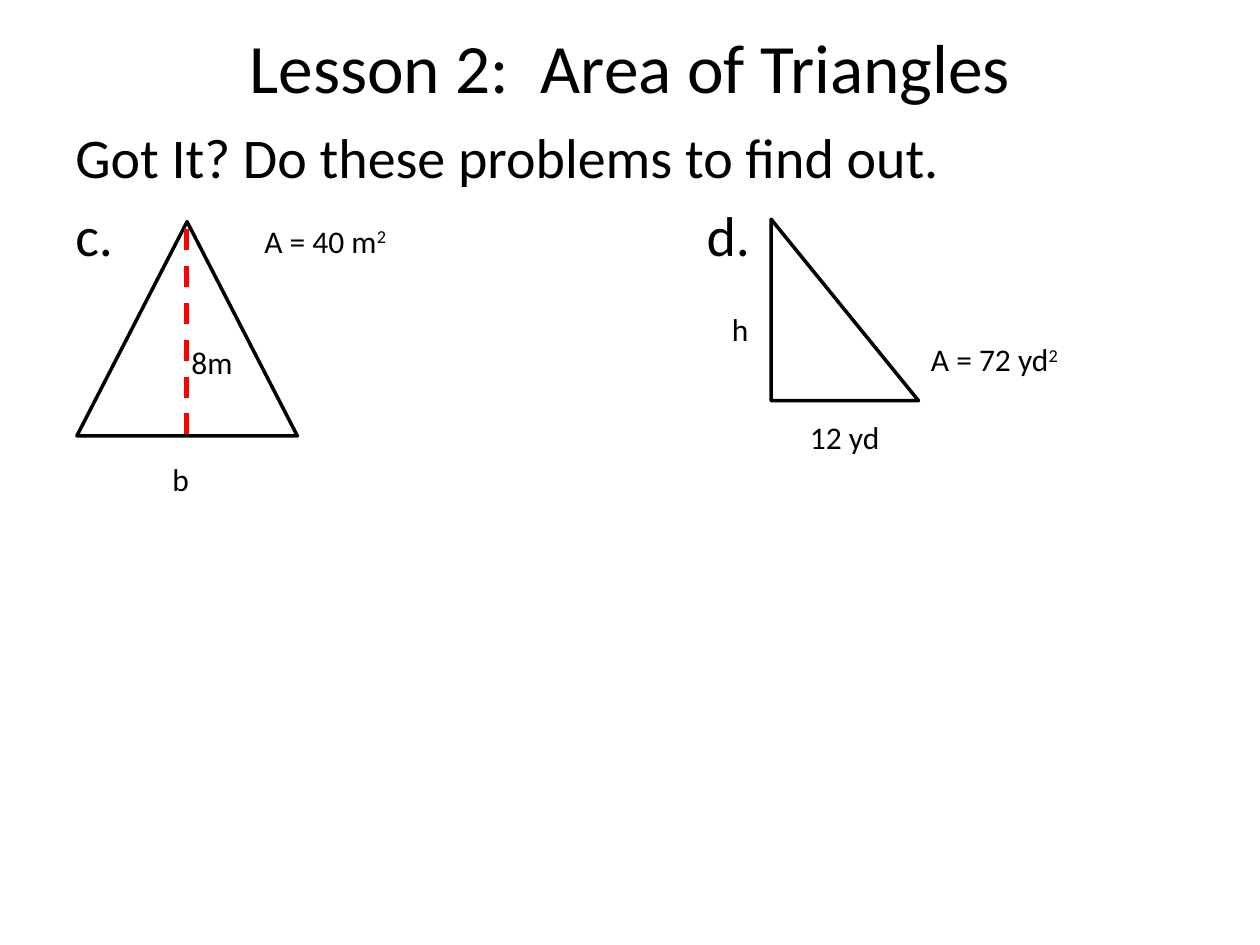
from dataclasses import dataclass

from lxml import etree
from pptx import Presentation
from pptx.dml.color import RGBColor
from pptx.enum.dml import MSO_LINE
from pptx.enum.shapes import MSO_CONNECTOR, MSO_SHAPE
from pptx.enum.text import MSO_ANCHOR, MSO_AUTO_SIZE, PP_ALIGN
from pptx.oxml.ns import qn
from pptx.util import Inches, Pt

TRIANGLE, RIGHT_TRI = MSO_SHAPE.ISOSCELES_TRIANGLE, MSO_SHAPE.RIGHT_TRIANGLE
STRAIGHT, DASH = MSO_CONNECTOR.STRAIGHT, MSO_LINE.DASH
LEFT, CENTER = PP_ALIGN.LEFT, PP_ALIGN.CENTER
TOP, MIDDLE = MSO_ANCHOR.TOP, MSO_ANCHOR.MIDDLE
FIT, FIXED = MSO_AUTO_SIZE.SHAPE_TO_FIT_TEXT, MSO_AUTO_SIZE.NONE
COLS, ROWS = 100, 75


@dataclass(frozen=True)
class Theme:
    font: str = "Calibri"
    ink: RGBColor = RGBColor(0, 0, 0)
    paper: RGBColor = RGBColor(255, 255, 255)
    accent: RGBColor = RGBColor(255, 0, 0)
    title: float = 39.6
    body: float = 32
    label: float = 18
    outline: float = 2
    height: float = 3


class Page:
    """Places elements on a grid of COLS by ROWS cells."""

    def __init__(self, deck, theme):
        self.theme = theme
        self.slide = deck.slides.add_slide(deck.slide_layouts[6])
        self.cell_w = deck.slide_width / COLS
        self.cell_h = deck.slide_height / ROWS

    def cells(self, *spans):
        units = (self.cell_w, self.cell_h) * 2
        return [round(span * unit) for span, unit in zip(spans, units)]

    def text(self, box, lines, size, align=LEFT, anchor=TOP, fit=FIXED, gap=0):
        """Each line is a string, or a pair of a string and its superscript."""
        frame = self.slide.shapes.add_textbox(*self.cells(*box)).text_frame
        style = {"word_wrap": True, "auto_size": fit, "vertical_anchor": anchor}
        for name, value in style.items():
            setattr(frame, name, value)
        for i, line in enumerate(lines):
            para = frame.add_paragraph() if i else frame.paragraphs[0]
            para.alignment, para.space_before = align, Pt(gap)
            parts = (line,) if isinstance(line, str) else line
            for k, part in enumerate(parts):
                run = para.add_run()
                run.text = part
                run.font.name, run.font.size = self.theme.font, Pt(size)
                run.font.color.rgb = self.theme.ink
                if k:
                    run._r.get_or_add_rPr().set("baseline", "30000")
        return frame

    def label(self, col, row, width, line):
        self.text((col, row, width, 4), [line], self.theme.label, fit=FIT)

    def tab(self, para, cols):
        stops = etree.SubElement(para._p.get_or_add_pPr(), qn("a:tabLst"))
        place = {"pos": str(self.cells(cols)[0]), "algn": "l"}
        etree.SubElement(stops, qn("a:tab"), place)

    def shape(self, kind, *box):
        shape = self.slide.shapes.add_shape(kind, *self.cells(*box))
        shape.shadow.inherit = False
        shape.fill.solid()
        shape.fill.fore_color.rgb = self.theme.paper
        shape.line.color.rgb = self.theme.ink
        shape.line.width = Pt(self.theme.outline)

    def dash(self, *ends):
        line = self.slide.shapes.add_connector(STRAIGHT, *self.cells(*ends))
        line.line.color.rgb = self.theme.accent
        line.line.width = Pt(self.theme.height)
        line.line.dash_style = DASH
        etree.SubElement(line._element.spPr, qn("a:effectLst"))


def main():
    deck = Presentation()
    deck.slide_width, deck.slide_height = Inches(10), Inches(7.5)
    theme = Theme()
    page = Page(deck, theme)

    # Triangle c, behind the text
    page.shape(TRIANGLE, 6.1, 17.6, 17.5, 17)

    # Title and task, with both problem letters on one tabbed line
    page.text((5, 1.7, 90, 7), ["Lesson 2:  Area of Triangles"], theme.title,
              CENTER, MIDDLE)
    task = page.text((5, 9.2, 90, 57.8),
                     ["Got It? Do these problems to find out.", "c.\td."],
                     theme.body, gap=0.2 * theme.body)
    page.tab(task.paragraphs[1], 50.1)

    # Height and labels of triangle c
    page.dash(14.8, 18.2, 14.8, 34.6)
    page.label(14.2, 26.7, 7.5, "8m")
    page.label(20, 17.1, 15.8, ("A = 40 m", "2"))
    page.label(12.7, 36, 15.6, "b")

    # Triangle d and its labels
    page.shape(RIGHT_TRI, 61.2, 17.4, 11.7, 14.4)
    page.label(57.1, 24.1, 6.3, "h")
    page.label(63.3, 32.7, 11.1, "12 yd")
    page.label(72.9, 26.5, 14.2, ("A = 72 yd", "2"))

    deck.save("out.pptx")


if __name__ == "__main__":
    main()
